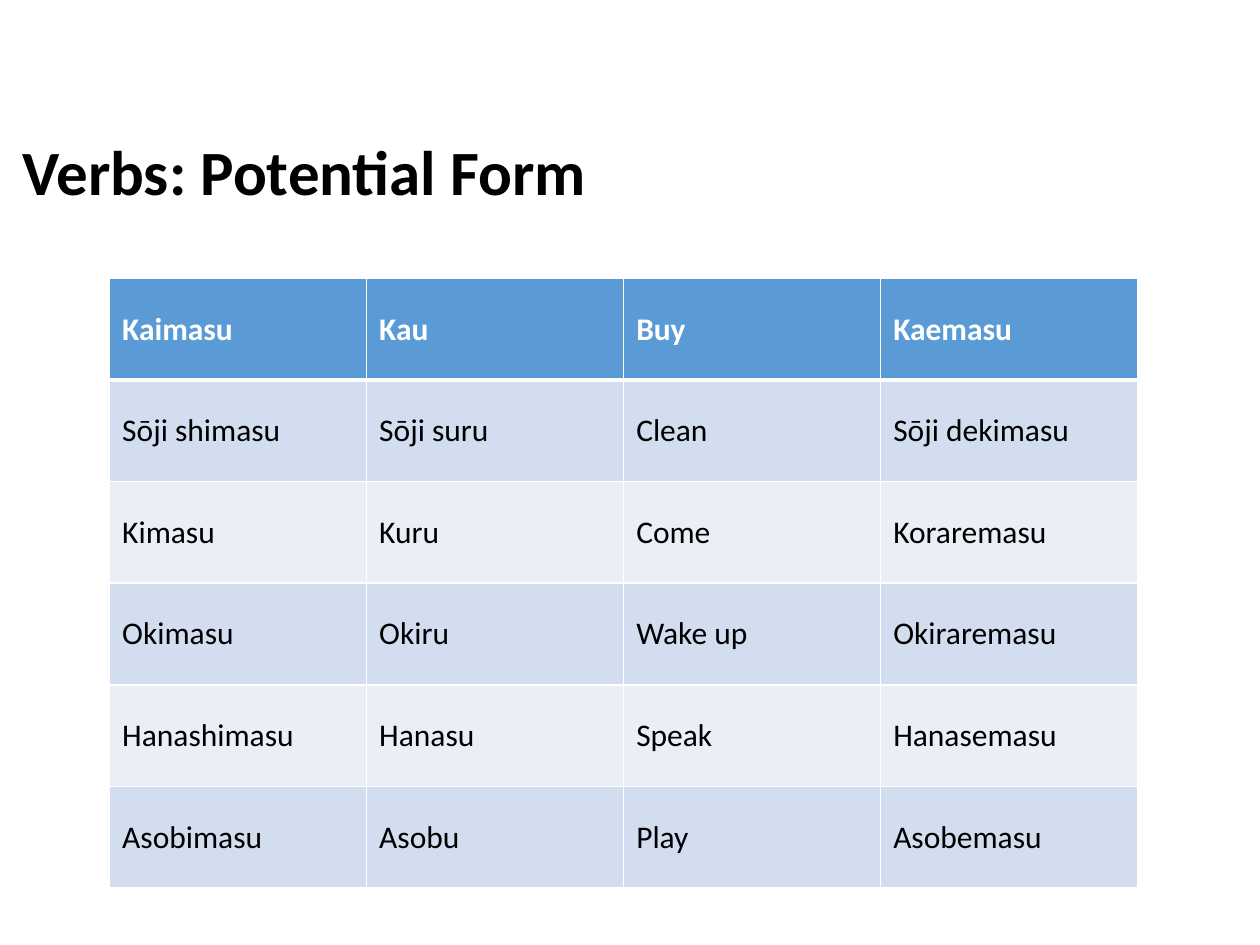
from lxml import etree
from pptx import Presentation
from pptx.dml.color import RGBColor as RGB
from pptx.enum.text import MSO_ANCHOR as ANCHOR, MSO_AUTO_SIZE as AUTO
from pptx.oxml.ns import qn
from pptx.util import Inches, Pt

COLORS = {"black": "000000", "white": "FFFFFF", "header": "5B9BD5",
          "odd": "D2DEEF", "even": "EAEFF7"}
VERBS = [
    ("Kaimasu", "Kau", "Buy", "Kaemasu"),
    ("Sōji shimasu", "Sōji suru", "Clean", "Sōji dekimasu"),
    ("Kimasu", "Kuru", "Come", "Koraremasu"),
    ("Okimasu", "Okiru", "Wake up", "Okiraremasu"),
    ("Hanashimasu", "Hanasu", "Speak", "Hanasemasu"),
    ("Asobimasu", "Asobu", "Play", "Asobemasu"),
]


def add_run(p, text, size, color, bold):
    r = p.add_run()
    r.text = text
    r.font.name = "Calibri"
    r.font.size = Pt(size)
    r.font.bold = bold
    r.font.color.rgb = RGB.from_string(COLORS[color])


def set_borders(cell, top, bottom):
    tcPr = cell._tc.get_or_add_tcPr()
    sides = [("lnL", 1), ("lnR", 1), ("lnT", top), ("lnB", bottom)]
    for i, (side, width) in enumerate(sides):
        ln = etree.Element(qn(f"a:{side}"), w=str(Pt(width)))
        fill = etree.SubElement(ln, qn("a:solidFill"))
        etree.SubElement(fill, qn("a:srgbClr"), val=COLORS["white"])
        tcPr.insert(i, ln)


prs = Presentation()
prs.slide_width, prs.slide_height = Inches(10), Inches(7.5)
s = prs.slides.add_slide(prs.slide_layouts[6])

# Title
tf = s.shapes.add_textbox(Inches(0.08), Inches(1), Inches(8.95), Inches(0.71)).text_frame
tf.word_wrap = True
tf.auto_size = AUTO.SHAPE_TO_FIT_TEXT
add_run(tf.paragraphs[0], "Verbs: Potential Form", 36, "black", True)

# Verb table
table = s.shapes.add_table(len(VERBS), len(VERBS[0]), Inches(0.87), Inches(2.21),
                           Inches(8.16), Inches(4.84)).table
for i, verb in enumerate(VERBS):
    header = i == 0
    fill = "header" if header else "odd" if i % 2 else "even"
    for j, text in enumerate(verb):
        cell = table.cell(i, j)
        cell.vertical_anchor = ANCHOR.MIDDLE
        cell.fill.solid()
        cell.fill.fore_color.rgb = RGB.from_string(COLORS[fill])
        # The rule under the header is heavier
        set_borders(cell, top=3 if i == 1 else 1, bottom=3 if header else 1)
        add_run(cell.text_frame.paragraphs[0], text, 18,
                "white" if header else "black", header)

prs.save("out.pptx")
